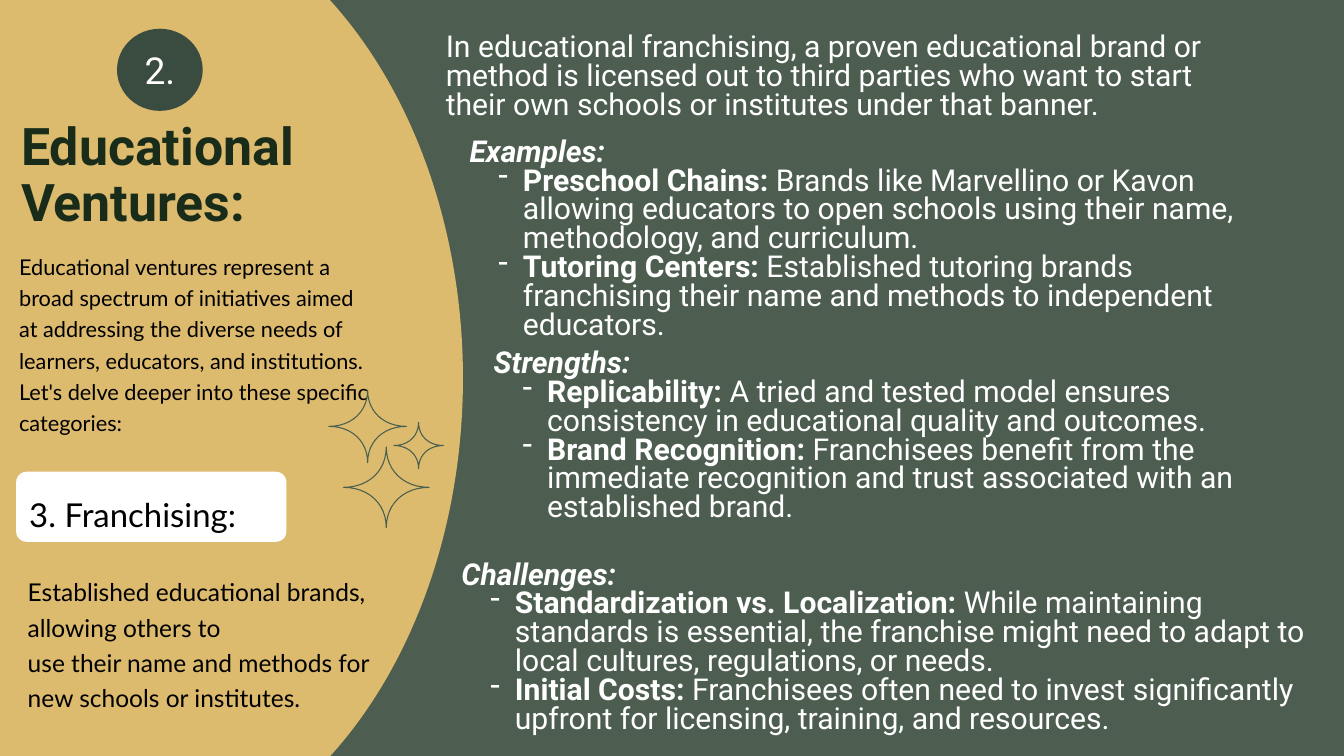
from lxml import etree
from pptx import Presentation
from pptx import util as u
from pptx.dml.color import RGBColor
from pptx.enum import shapes, text
from pptx.oxml.ns import qn

GREEN = RGBColor(0x4D, 0x5E, 0x50)
DARK_GREEN = RGBColor(0x3A, 0x4C, 0x3F)
SPARKLE_GREEN = RGBColor(0x49, 0x5F, 0x4F)
TITLE_GREEN = RGBColor(0x19, 0x2C, 0x1A)
GOLD = RGBColor(0xDC, 0xBA, 0x6E)
WHITE = RGBColor(0xFF, 0xFF, 0xFF)
BLACK = RGBColor(0, 0, 0)

INSET = u.Inches(0.05)
BODY_SIZE = 43

# Each section: left, top, width, heading, (bold lead, explanation) items
SECTIONS = [
    (9.26, 2.71, 16.35, "Examples:", [
        ("Preschool Chains:", "Brands like Marvellino or Kavon allowing educators to open "
         "schools using their name, methodology, and curriculum."),
        ("Tutoring Centers:", "Established tutoring brands franchising their name and "
         "methods to independent educators."),
    ]),
    (9.74, 6.9, 16.11, "Strengths:", [
        ("Replicability:", "A tried and tested model ensures consistency in educational "
         "quality and outcomes."),
        ("Brand Recognition:", "Franchisees benefit from the immediate recognition and "
         "trust associated with an established brand."),
    ]),
    (9.1, 11.1, 17.08, "Challenges:", [
        ("Standardization vs. Localization:", "While maintaining standards is essential, "
         "the franchise might need to adapt to local cultures, regulations, or needs."),
        ("Initial Costs:", "Franchisees often need to invest significantly upfront for "
         "licensing, training, and resources."),
    ]),
]

# Each sparkle: centre x, centre y, half width, half height
SPARKLES = [(7.29, 8.46, 0.77, 0.72), (8.3, 8.84, 0.49, 0.46), (7.66, 9.67, 0.85, 0.8)]


def format_run(run, size, font, color, bold=False, italic=False):
    run.font.size = u.Pt(size)
    run.font.name = font
    run.font.color.rgb = color
    run.font.bold = bold
    run.font.italic = italic


def set_insets(text_frame):
    text_frame.margin_left = text_frame.margin_right = INSET
    text_frame.margin_top = text_frame.margin_bottom = INSET
    text_frame.word_wrap = True


def add_text_frame(slide, left, top, width, height):
    box = slide.shapes.add_textbox(*map(u.Inches, (left, top, width, height)))
    text_frame = box.text_frame
    set_insets(text_frame)
    text_frame.auto_size = text.MSO_AUTO_SIZE.SHAPE_TO_FIT_TEXT
    return text_frame


def add_text(slide, place, wording, size, font, color, spacing, bold=False):
    text_frame = add_text_frame(slide, *place)
    text_frame.text = wording
    for paragraph in text_frame.paragraphs:
        paragraph.line_spacing = spacing
        format_run(paragraph.runs[0], size, font, color, bold)
    return text_frame


def add_dash(paragraph):
    properties = paragraph._p.get_or_add_pPr()
    properties.set("marL", str(u.Inches(1.06)))
    properties.set("indent", str(u.Inches(-0.49)))
    etree.SubElement(properties, qn("a:buChar")).set("char", "-")


def add_section(slide, left, top, width, heading, items):
    text_frame = add_text(slide, (left, top, width, 3.42), heading,
                          BODY_SIZE, "Roboto", WHITE, 0.8, bold=True)
    text_frame.paragraphs[0].runs[0].font.italic = True
    for lead, explanation in items:
        paragraph = text_frame.add_paragraph()
        paragraph.line_spacing = 0.8
        add_dash(paragraph)
        for wording, bold in ((lead + " ", True), (explanation, False)):
            run = paragraph.add_run()
            run.text = wording
            format_run(run, BODY_SIZE, "Roboto", WHITE, bold)


def add_plain_shape(slide, kind, place, color):
    shape = slide.shapes.add_shape(kind, *map(u.Inches, place))
    shape.shadow.inherit = False
    shape.fill.solid()
    shape.fill.fore_color.rgb = color
    shape.line.fill.background()
    return shape


def add_sparkle(slide, center_x, center_y, half_width, half_height, steps=12, pull=0.41):
    # Four inward cubic curves, each joining one tip to the next
    tips = [(0, -1), (1, 0), (0, 1), (-1, 0)]
    points = []
    for start, end in zip(tips, tips[1:] + tips[:1]):
        for step in range(steps):
            t = step / steps
            from_start = (1 - t) ** 3 + 3 * pull * t * (1 - t) ** 2
            from_end = t ** 3 + 3 * pull * t ** 2 * (1 - t)
            x, y = (from_start * a + from_end * b for a, b in zip(start, end))
            points.append((u.Inches(center_x + half_width * x),
                           u.Inches(center_y + half_height * y)))
    builder = slide.shapes.build_freeform(*points[0])
    builder.add_line_segments(points[1:], close=True)
    shape = builder.convert_to_shape()
    shape.shadow.inherit = False
    shape.fill.background()
    shape.line.color.rgb = SPARKLE_GREEN
    shape.line.width = u.Pt(1.5)


def add_number_badge(slide):
    badge = add_plain_shape(slide, shapes.MSO_SHAPE.OVAL, (2.32, 0.57, 1.7, 1.63), DARK_GREEN)
    text_frame = badge.text_frame
    set_insets(text_frame)
    text_frame.vertical_anchor = text.MSO_ANCHOR.MIDDLE
    text_frame.text = "2."
    paragraph = text_frame.paragraphs[0]
    paragraph.alignment = text.PP_ALIGN.CENTER
    format_run(paragraph.runs[0], 53, "Roboto", WHITE)


def main():
    presentation = Presentation()
    presentation.slide_width = u.Inches(26.65)
    presentation.slide_height = u.Inches(15)
    slide = presentation.slides.add_slide(presentation.slide_layouts[6])
    slide.background.fill.solid()
    slide.background.fill.fore_color.rgb = GREEN

    # Right side: introduction and sections
    add_text(slide, (8.79, 0.63, 16.22, 1.51),
             "In educational franchising, a proven educational brand or method is licensed out "
             "to third parties who want to start their own schools or institutes under that "
             "banner.", BODY_SIZE, "Roboto", WHITE, 0.8)
    for section in SECTIONS:
        add_section(slide, *section)

    # Left side: gold panel, title and overview
    add_plain_shape(slide, shapes.MSO_SHAPE.OVAL, (-5.17, -2.18, 14.35, 19.37), GOLD)
    title = add_text(slide, (0.37, 2.21, 7.55, 2.45), "Educational Ventures:",
                     74, "Roboto", TITLE_GREEN, 0.9, bold=True)
    title.vertical_anchor = text.MSO_ANCHOR.BOTTOM
    add_text(slide, (0.33, 4.88, 7.2, 3.79),
             "Educational ventures represent a broad spectrum of initiatives aimed at "
             "addressing the diverse needs of learners, educators, and institutions. Let's "
             "delve deeper into these specific categories:", 31, "Lato", BLACK, 1.2)

    # Topic label and its summary
    label = add_plain_shape(slide, shapes.MSO_SHAPE.ROUNDED_RECTANGLE,
                            (0.32, 9.36, 5.36, 1.39), WHITE)
    label.adjustments[0] = 0.15
    add_text(slide, (0.53, 9.61, 5.47, 0.88), "3. Franchising:", 47, "Lato", BLACK, 1.2)
    add_text(slide, (0.5, 11.29, 7.15, 2.78),
             "Established educational brands, allowing others to\n"
             "use their name and methods for new schools or institutes.",
             35, "Lato", BLACK, 1.2)

    # Decoration
    for sparkle in SPARKLES:
        add_sparkle(slide, *sparkle)
    add_number_badge(slide)

    presentation.save("out.pptx")


if __name__ == "__main__":
    main()
